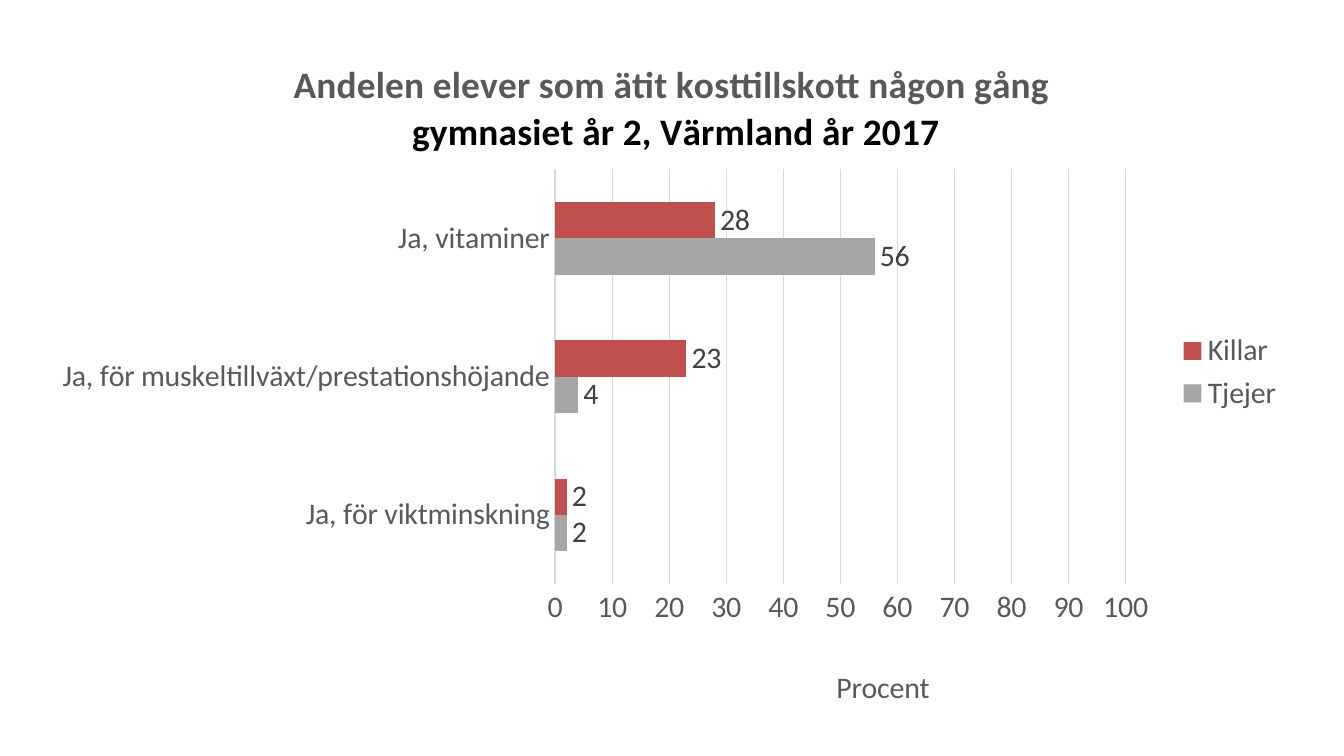
import pptx
import pptx.chart.data
import pptx.dml.color
import pptx.enum.chart
import pptx.oxml
import pptx.oxml.ns
import pptx.util

Pt = pptx.util.Pt
qn = pptx.oxml.ns.qn
FONT = "Calibri"
COLORS = {"text": "595959", "title": "000000", "label": "404040",
          "grid": "D9D9D9", "Tjejer": "A6A6A6", "Killar": "C0504D"}
CATEGORIES = ["Ja, för viktminskning",
              "Ja, för muskeltillväxt/prestationshöjande", "Ja, vitaminer"]
SERIES = {"Tjejer": (2, 4, 56), "Killar": (2, 23, 28)}
TITLE = [("Andelen elever som ätit kosttillskott någon gång ", "text"),
         ("gymnasiet år 2, Värmland år 2017", "title")]


def rgb(name):
    return pptx.dml.color.RGBColor.from_string(COLORS[name])


def style_font(font, color, size=16, bold=False):
    font.name = FONT
    font.size = Pt(size)
    font.bold = bold
    font.color.rgb = rgb(color)


def style_line(line):
    line.color.rgb = rgb("grid")
    line.width = Pt(0.75)


def place(element, **fractions):
    """Give a chart part a manual layout in fractions of the chart."""
    for old in element.findall(qn("c:layout")):
        element.remove(old)
    inner = '<c:layoutTarget val="inner"/>' if "w" in fractions else ""
    modes = "".join(f'<c:{key}Mode val="edge"/>' for key in "xy")
    sizes = "".join(f'<c:{key} val="{value}"/>' for key, value in fractions.items())
    layout = pptx.oxml.parse_xml(
        f'<c:layout {pptx.oxml.ns.nsdecls("c")}><c:manualLayout>'
        f"{inner}{modes}{sizes}</c:manualLayout></c:layout>")
    text = element.find(qn("c:tx"))
    if text is None:
        element.insert(0, layout)
    else:
        text.addnext(layout)


def write_title(title, lines, size, bold):
    frame = title.text_frame
    for index, (words, color) in enumerate(lines):
        para = frame.add_paragraph() if index else frame.paragraphs[0]
        span = para.add_run()
        span.text = words
        style_font(span.font, color, size, bold)


def style_axes(chart):
    for axis in (chart.category_axis, chart.value_axis):
        axis.major_tick_mark = pptx.enum.chart.XL_TICK_MARK.NONE
        axis.minor_tick_mark = pptx.enum.chart.XL_TICK_MARK.NONE
        style_font(axis.tick_labels.font, "text")
    style_line(chart.category_axis.format.line)

    values = chart.value_axis
    values.minimum_scale, values.maximum_scale, values.major_unit = 0, 100, 10
    values.has_major_gridlines = True
    style_line(values.major_gridlines.format.line)
    values.format.line.fill.background()
    values.tick_labels.number_format = "0"
    values.tick_labels.number_format_is_linked = False
    write_title(values.axis_title, [("Procent", "text")], 16, False)
    place(values.axis_title._element, x=0.63, y=0.92)


def style_bars(plot):
    plot.gap_width = 182
    plot.vary_by_categories = False
    for series in plot.series:
        series.format.fill.solid()
        series.format.fill.fore_color.rgb = rgb(series.name)
        labels = series.data_labels
        labels.show_value = True
        labels.number_format = "0"
        labels.number_format_is_linked = False
        labels.position = pptx.enum.chart.XL_LABEL_POSITION.OUTSIDE_END
        style_font(labels.font, "label")


def add_supplement_chart(page):
    data = pptx.chart.data.CategoryChartData(number_format="0")
    data.categories = CATEGORIES
    for name, values in SERIES.items():
        data.add_series(name, values)
    chart = page.shapes.add_chart(
        pptx.enum.chart.XL_CHART_TYPE.BAR_CLUSTERED,
        Pt(20.16), Pt(15.12), Pt(674.64), Pt(368.64), data).chart
    style_font(chart.font, "title", 12)
    chart.has_title = True
    write_title(chart.chart_title, TITLE, 20, True)
    place(chart.chart_title._element, x=0.2, y=0.04)
    chart.has_legend = True
    chart.legend.position = pptx.enum.chart.XL_LEGEND_POSITION.RIGHT
    chart.legend.include_in_layout = False
    style_font(chart.legend.font, "text")
    style_axes(chart)
    style_bars(chart.plots[0])
    plot_area = chart._chartSpace.chart.plotArea
    place(plot_area, x=0.411, y=0.205, w=0.453, h=0.603)


def main():
    deck = pptx.Presentation()
    deck.slide_width, deck.slide_height = Pt(720), Pt(405)
    page = deck.slides.add_slide(deck.slide_layouts[6])
    add_supplement_chart(page)
    deck.save("out.pptx")


if __name__ == "__main__":
    main()
